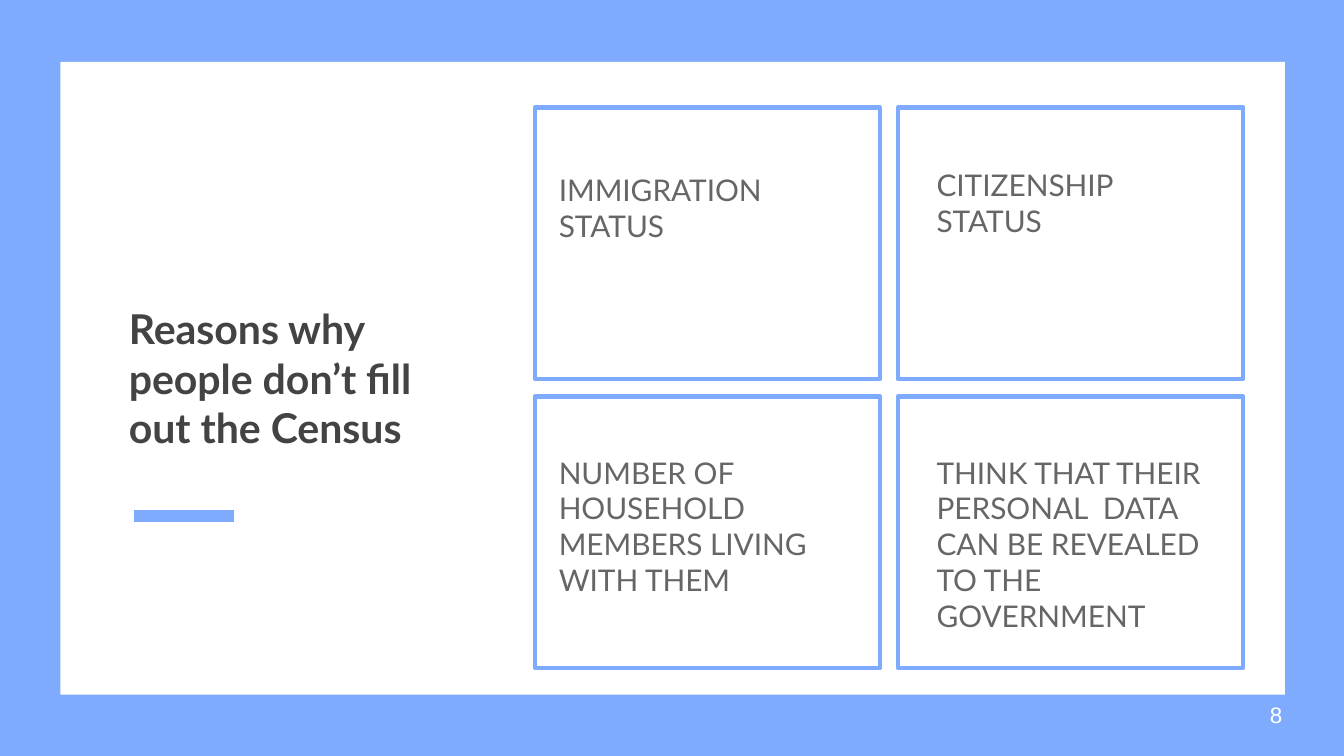
from lxml import etree
from pptx import Presentation
from pptx.dml.color import RGBColor
from pptx.enum.shapes import MSO_CONNECTOR, MSO_SHAPE
from pptx.enum.text import MSO_ANCHOR
from pptx.oxml.ns import qn
from pptx.util import Inches, Pt

COLORS = {
    "blue": "7FABFF",
    "white": "FFFFFF",
    "title": "434343",
    "body": "666666",
}


def rgb(name):
    return RGBColor.from_string(COLORS[name])


def add_text(s, box, text, size, color, font="Lato", bold=False, anchor=MSO_ANCHOR.TOP):
    tf = s.shapes.add_textbox(*[Inches(v) for v in box]).text_frame
    tf.word_wrap = True
    tf.vertical_anchor = anchor
    tf.margin_left = tf.margin_right = Inches(0.1)
    tf.margin_top = tf.margin_bottom = Inches(0.1)
    tf.text = text
    r = tf.paragraphs[0].runs[0]
    r.font.name = font
    r.font.size = Pt(size)
    r.font.bold = bold
    r.font.color.rgb = rgb(color)


# 16:9 slide
prs = Presentation()
prs.slide_width = Inches(10)
prs.slide_height = Inches(10) * 9 // 16
s = prs.slides.add_slide(prs.slide_layouts[6])

# Blue background with a white panel
s.background.fill.solid()
s.background.fill.fore_color.rgb = rgb("blue")
panel = s.shapes.add_shape(
    MSO_SHAPE.RECTANGLE, Inches(0.45), Inches(0.46), Inches(9.11), Inches(4.71)
)
panel.shadow.inherit = False
panel.fill.solid()
panel.fill.fore_color.rgb = rgb("white")
panel.line.fill.background()

# Accent line under the title
accent = s.shapes.add_connector(
    MSO_CONNECTOR.STRAIGHT, Inches(1), Inches(3.84), Inches(1.74), Inches(3.84)
)
accent.line.color.rgb = rgb("blue")
accent.line.width = Pt(6)
etree.SubElement(accent._element.spPr, qn("a:effectLst"))

# Two by two grid of outlined cards
for top in (0.8, 2.95):
    for left in (3.98, 6.68):
        card = s.shapes.add_shape(
            MSO_SHAPE.RECTANGLE, Inches(left), Inches(top), Inches(2.57), Inches(2.02)
        )
        card.shadow.inherit = False
        card.fill.background()
        card.line.color.rgb = rgb("blue")
        card.line.width = Pt(2.25)

# Reasons
reasons = [
    ((4.06, 1.18, 2.37, 1.24), "IMMIGRATION STATUS"),
    ((6.87, 1.14, 2.18, 1.24), "CITIZENSHIP STATUS"),
    ((4.06, 3.28, 2.3, 1.24), "NUMBER OF HOUSEHOLD MEMBERS LIVING WITH THEM"),
    ((6.87, 3.28, 2.18, 1.55),
     "THINK THAT THEIR PERSONAL  DATA CAN BE REVEALED TO THE GOVERNMENT"),
]
for box, text in reasons:
    add_text(s, box, text, 16, "body")

# Slide number and title
add_text(s, (9.35, 5.1, 0.6, 0.43), "8", 12, "white", font="Arial",
         anchor=MSO_ANCHOR.MIDDLE)
add_text(s, (0.86, 1.9, 2.78, 1.82), "Reasons why people don’t fill out the Census",
         22, "title", bold=True, anchor=MSO_ANCHOR.MIDDLE)

prs.save("out.pptx")
